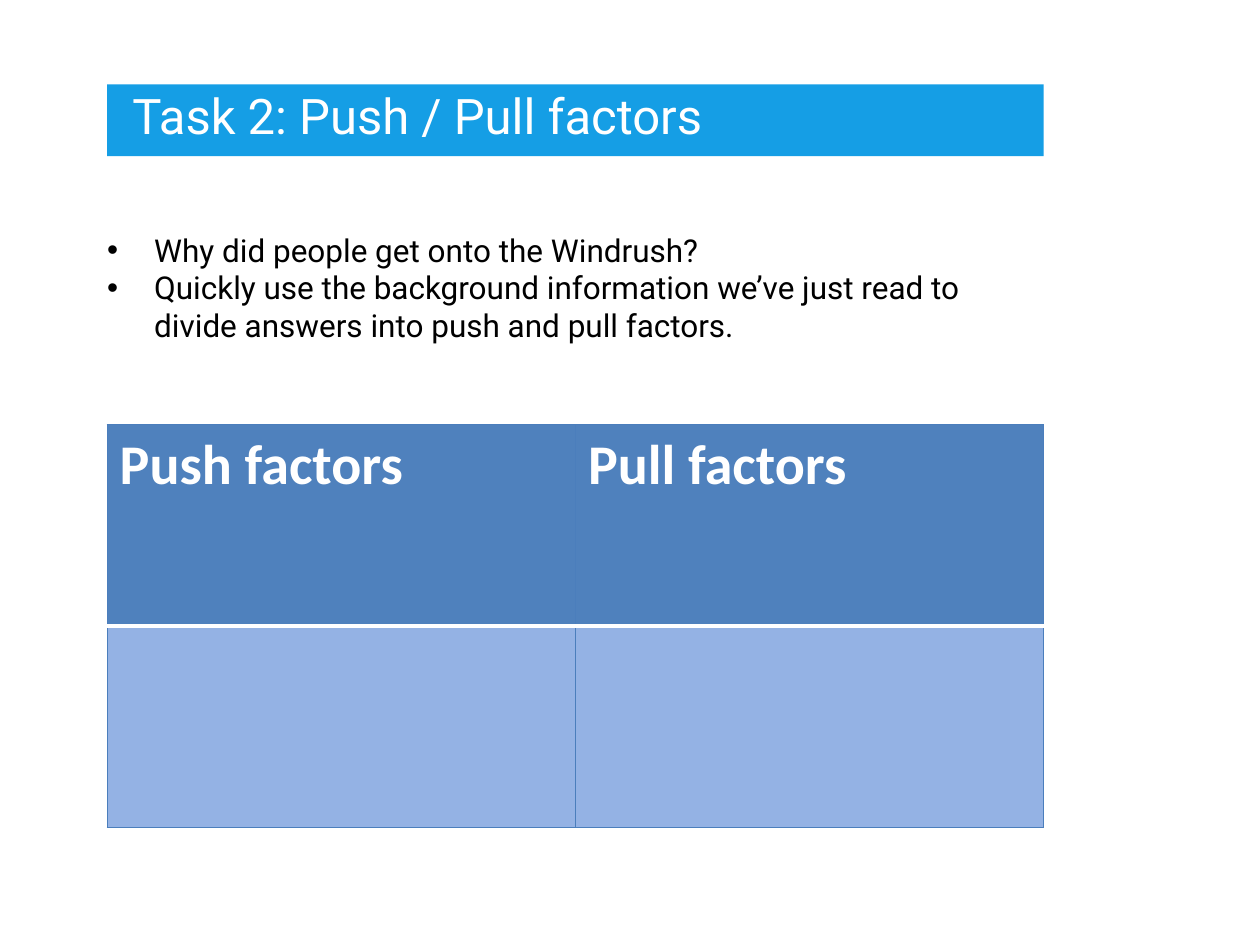
import pptx
import pptx.enum.shapes
import pptx.enum.text
import pptx.util
import pptx.dml.color
import pptx.oxml
import pptx.oxml.ns
from pptx.util import Cm, Pt

# Content
TITLE = "Task 2: Push / Pull factors"
QUESTIONS = [
    "Why did people get onto the Windrush?",
    "Quickly use the background information we’ve just read to divide answers into push and pull factors.",
]
TABLE_ROWS = [("Push factors", "Pull factors"), ("", "")]

COLORS = {
    "banner": "159EE5",
    "light": "FFFFFF",
    "text": "000000",
    "header": "4F81BD",
    "body": "94B2E4",
    "border": "4B7EBC",
}
LEFT, WIDTH = 2.16, 18.88
TITLE_INDENT = 0.51
BULLET_INDENT = Cm(0.95)
ROW_HEIGHT = 4.06


def rgb(name):
    return pptx.dml.color.RGBColor.from_string(COLORS[name])


def style_paragraph(paragraph, font_name, size, color, bold=False):
    for run in paragraph.runs:
        run.font.name = font_name
        run.font.size = Pt(size)
        run.font.bold = bold
        run.font.color.rgb = rgb(color)


def add_text(slide, left, top, width, height, lines, size, color):
    shape = slide.shapes.add_textbox(Cm(left), Cm(top), Cm(width), Cm(height))
    text_frame = shape.text_frame
    text_frame.word_wrap = True
    text_frame.margin_left = text_frame.margin_right = 0
    text_frame.margin_top = text_frame.margin_bottom = 0
    text_frame.text = "\n".join(lines)
    for paragraph in text_frame.paragraphs:
        style_paragraph(paragraph, "Roboto", size, color)
    return text_frame


def add_bullet(paragraph):
    properties = paragraph._p.get_or_add_pPr()
    properties.set("marL", str(BULLET_INDENT))
    properties.set("indent", str(-BULLET_INDENT))
    namespace = pptx.oxml.ns.nsdecls("a")
    properties.append(pptx.oxml.parse_xml(f'<a:buFont {namespace} typeface="Arial"/>'))
    properties.append(pptx.oxml.parse_xml(f'<a:buChar {namespace} char="•"/>'))


def add_border(cell, side, color, points):
    cell._tc.get_or_add_tcPr().append(pptx.oxml.parse_xml(
        f'<a:{side} {pptx.oxml.ns.nsdecls("a")} w="{Pt(points)}"><a:solidFill>'
        f'<a:srgbClr val="{COLORS[color]}"/></a:solidFill></a:{side}>'))


def main():
    presentation = pptx.Presentation()
    presentation.slide_width, presentation.slide_height = Cm(25.4), Cm(19.05)
    slide = presentation.slides.add_slide(presentation.slide_layouts[6])

    # Title banner
    banner = slide.shapes.add_shape(
        pptx.enum.shapes.MSO_SHAPE.RECTANGLE, Cm(LEFT), Cm(1.7), Cm(WIDTH), Cm(1.45))
    banner.shadow.inherit = False
    banner.fill.solid()
    banner.fill.fore_color.rgb = rgb("banner")
    banner.line.fill.background()
    title = add_text(slide, LEFT + TITLE_INDENT, 1.73, WIDTH - TITLE_INDENT, 1.19,
                     [TITLE], 28, "light")
    title.auto_size = pptx.enum.text.MSO_AUTO_SIZE.SHAPE_TO_FIT_TEXT

    # Questions
    questions = add_text(slide, LEFT, 4.65, WIDTH, 3.12, QUESTIONS, 18, "text")
    for paragraph in questions.paragraphs:
        add_bullet(paragraph)

    # Push and pull table
    row_count, column_count = len(TABLE_ROWS), len(TABLE_ROWS[0])
    table = slide.shapes.add_table(
        row_count, column_count, Cm(LEFT), Cm(8.56),
        Cm(WIDTH), Cm(ROW_HEIGHT * row_count)).table
    table.horz_banding = False
    for row_index, texts in enumerate(TABLE_ROWS):
        is_header = row_index == 0
        for column_index, text in enumerate(texts):
            cell = table.cell(row_index, column_index)
            add_border(cell, "lnL", "border", 0.75)
            add_border(cell, "lnR", "border", 0.75)
            if is_header:
                add_border(cell, "lnT", "border", 0.75)
                add_border(cell, "lnB", "light", 2)
            else:
                add_border(cell, "lnT", "light", 2)
                add_border(cell, "lnB", "border", 0.75)
            cell.fill.solid()
            cell.fill.fore_color.rgb = rgb("header" if is_header else "body")
            if text:
                cell.text_frame.text = text
                style_paragraph(cell.text_frame.paragraphs[0], "Calibri", 32, "light", True)

    presentation.save("out.pptx")


if __name__ == "__main__":
    main()
